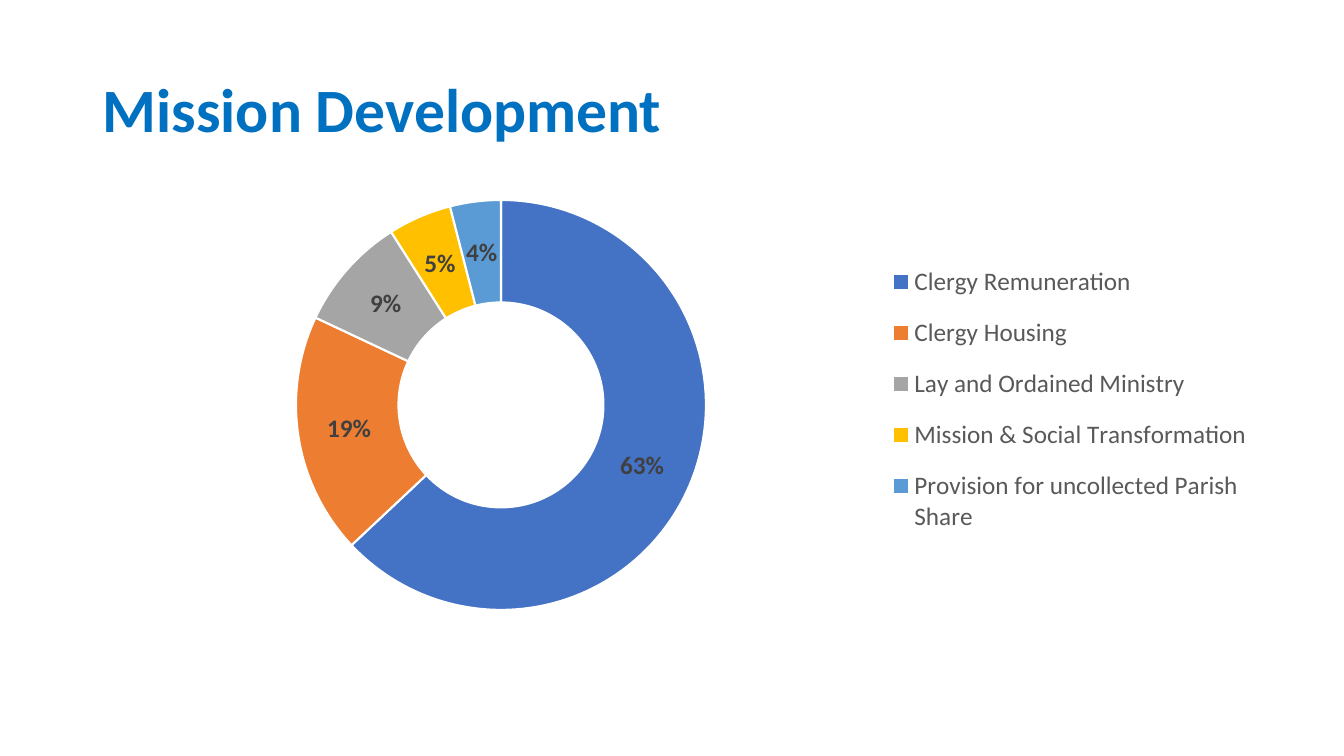
from lxml import etree
from pptx import Presentation
from pptx.chart.data import CategoryChartData
from pptx.dml.color import RGBColor
from pptx.enum.chart import XL_CHART_TYPE as ChartType, XL_LEGEND_POSITION as LegendPosition
from pptx.enum.text import MSO_ANCHOR as Anchor
from pptx.oxml.ns import qn
from pptx.util import Emu, Pt

SCALE = 914400 / 100.8
SHARES = [
    ("Clergy Remuneration", 0.63, "4472C4"),
    ("Clergy Housing", 0.19, "ED7D31"),
    ("Lay and Ordained Ministry", 0.09, "A5A5A5"),
    ("Mission & Social Transformation", 0.05, "FFC000"),
    ("Provision for uncollected Parish Share", 0.04, "5B9BD5"),
]


def px(length):
    return Emu(round(length * SCALE))


def rgb(value):
    return RGBColor.from_string(value)


class SlideBuilder:
    face = "Calibri"

    def __init__(self, slide):
        self.slide = slide

    def style_font(self, font, size, color, bold=False):
        for key, value in dict(name=self.face, size=Pt(size), bold=bold).items():
            setattr(font, key, value)
        font.color.rgb = rgb(color)

    def title(self, text, box):
        frame = self.slide.shapes.add_textbox(*map(px, box)).text_frame
        for key, value in dict(word_wrap=True, vertical_anchor=Anchor.MIDDLE).items():
            setattr(frame, key, value)
        heading = frame.paragraphs[0]
        heading.line_spacing = 0.9
        run = heading.add_run()
        run.text = text
        self.style_font(run.font, 44, "0070C0", True)

    def place(self, element, box, chart_box, inner=False):
        """Fix the area of a chart part, given in slide px."""
        left, top, width, height = chart_box
        fractions = dict(
            x=(box[0] - left) / width, y=(box[1] - top) / height,
            w=box[2] / width, h=box[3] / height,
        )
        layout = element.find(qn("c:layout"))
        if layout is None:
            layout = etree.Element(qn("c:layout"))
            if inner:
                element.insert(0, layout)
            else:
                element.find(qn("c:legendPos")).addnext(layout)
        manual = etree.SubElement(layout, qn("c:manualLayout"))
        settings = {"layoutTarget": "inner"} if inner else {}
        settings.update(xMode="edge", yMode="edge")
        settings.update({key: f"{value:.4f}" for key, value in fractions.items()})
        for tag, value in settings.items():
            etree.SubElement(manual, qn(f"c:{tag}")).set("val", value)

    def doughnut(self, shares, box, ring_box, legend_box):
        names, values, colors = zip(*shares)
        data = CategoryChartData(number_format="0%")
        data.categories = names
        data.add_series("Series 1", values)
        chart = self.slide.shapes.add_chart(ChartType.DOUGHNUT, *map(px, box), data).chart
        chart.has_title = False
        self.style_font(chart.font, 10, "000000")

        # Ring segments
        plot = chart.plots[0]
        plot.vary_by_categories = True
        for index, color in enumerate(colors):
            segment = plot.series[0].points[index].format
            segment.fill.solid()
            segment.fill.fore_color.rgb = rgb(color)
            segment.line.color.rgb = rgb("FFFFFF")
            segment.line.width = Pt(1.5)

        # Percentages
        labels = plot.series[0].data_labels
        options = dict(show_value=True, show_percentage=False, show_legend_key=False,
                       number_format="0%", number_format_is_linked=False)
        for key, value in options.items():
            setattr(labels, key, value)
        self.style_font(labels.font, 18, "404040", True)

        # Legend
        chart.has_legend = True
        legend = chart.legend
        for key, value in dict(position=LegendPosition.RIGHT, include_in_layout=False).items():
            setattr(legend, key, value)
        self.style_font(legend.font, 18, "595959")

        plot_area = chart.element.find(f".//{qn('c:plotArea')}")
        legend_area = chart.element.find(f".//{qn('c:legend')}")
        self.place(plot_area, ring_box, box, inner=True)
        self.place(legend_area, legend_box, box)


def main():
    deck = Presentation()
    deck.slide_width, deck.slide_height = px(1344), px(756)
    builder = SlideBuilder(deck.slides.add_slide(deck.slide_layouts[6]))
    builder.title("Mission Development", (93, 40, 1159, 146))
    builder.doughnut(SHARES, box=(93, 186, 1194, 439),
                     ring_box=(296, 200, 410, 410), legend_box=(880, 246, 380, 306))
    deck.save("out.pptx")


if __name__ == "__main__":
    main()
